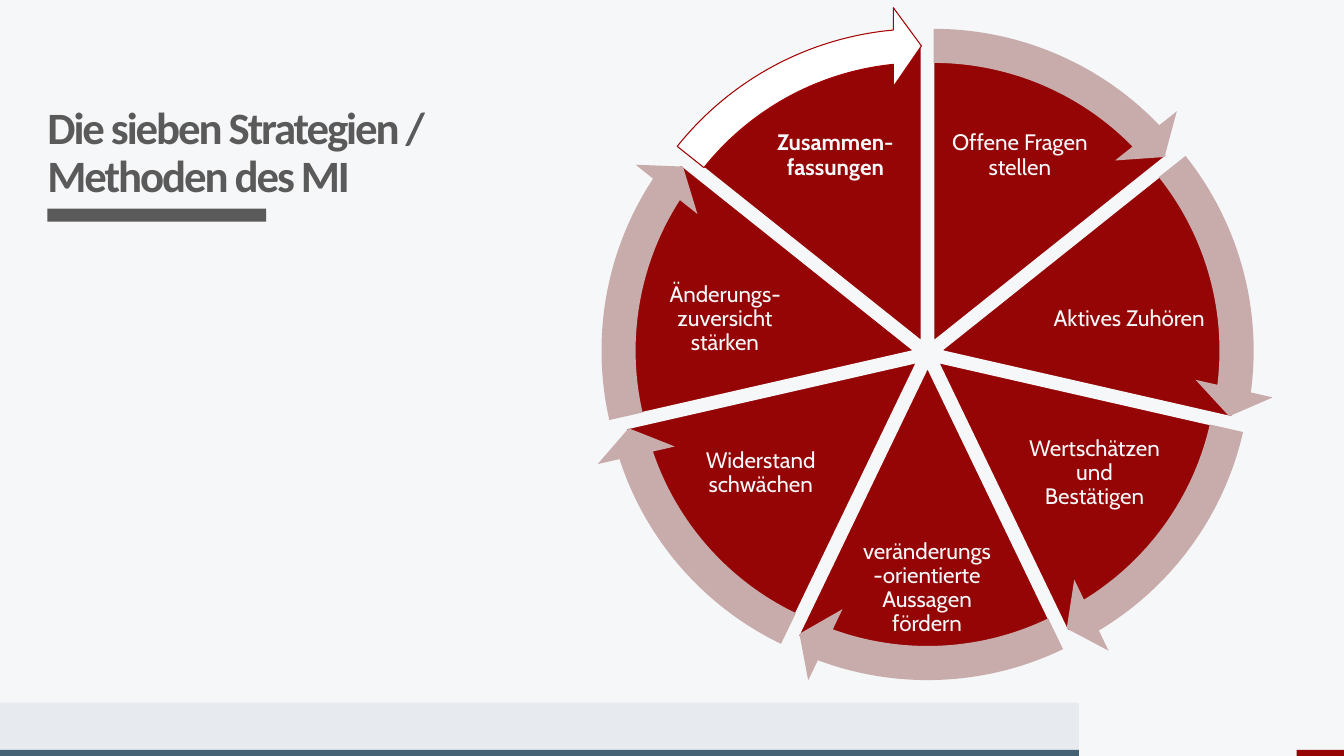
from math import cos, pi, sin

from pptx import Presentation
from pptx.dml.color import RGBColor
from pptx.enum.shapes import MSO_SHAPE
from pptx.enum.text import MSO_ANCHOR, PP_ALIGN
from pptx.util import Inches, Pt

PAPER = RGBColor(0xF6, 0xF7, 0xF9)
WHITE = RGBColor(0xFF, 0xFF, 0xFF)
GREY = RGBColor(0x5A, 0x5A, 0x5A)
MIST = RGBColor(0xE7, 0xEA, 0xEF)
SLATE = RGBColor(0x45, 0x61, 0x74)
RED = RGBColor(0x95, 0x05, 0x05)
OUTLINE = RGBColor(0xA4, 0x00, 0x00)
ROSE = RGBColor(0xC8, 0xAB, 0xAB)

HUB_X, HUB_Y, GAP = 9.2, 3.51, 0.14
PIE_SIZE, ARROW_SIZE = 5.91, 6.64
TURN, TOP = 216, 162  # full circle and twelve o'clock in adjustment units
HEAD = 3.275  # angle taken up by an arrowhead

BARS = [
    (0, 6.97, 10.7, 0.47, MIST),
    (0, 7.44, 10.7, 0.06, SLATE),
    (12.86, 7.44, 0.47, 0.06, RED),
    (0.47, 2.07, 2.17, 0.13, GREY),
]
STRATEGIES = [
    ("Offene Fragen stellen", (9.41, 0.98, 1.41, 1.13)),
    ("Aktives Zuhören", (10.39, 2.67, 1.62, 0.99)),
    ("Wertschätzen und Bestätigen", (10.15, 4.15, 1.41, 1.09)),
    ("veränderungs-orientierte Aussagen fördern", (8.51, 5.34, 1.37, 0.99)),
    ("Widerstand schwächen", (6.84, 4.15, 1.41, 1.09)),
    ("Änderungs-zuversicht stärken", (6.38, 2.67, 1.62, 0.99)),
    ("Zusammen-fassungen", (7.58, 0.98, 1.41, 1.13)),
]


class SlideBuilder:
    def __init__(self, slide):
        self.s = slide
        fill = slide.background.fill
        fill.solid()
        fill.fore_color.rgb = PAPER

    def shape(self, kind, box, color, line=None, width=1, adjustments=()):
        sp = self.s.shapes.add_shape(kind, *map(Inches, box))
        sp.shadow.inherit = False
        sp.fill.solid()
        sp.fill.fore_color.rgb = color
        if line is None:
            sp.line.fill.background()
        else:
            sp.line.color.rgb = line
            sp.line.width = Pt(width)
        for i, value in enumerate(adjustments):
            sp.adjustments[i] = value

    def text(self, text, box, color, font, margin=0, anchor=MSO_ANCHOR.MIDDLE,
             align=PP_ALIGN.CENTER, after=0, tracking=0):
        tf = self.s.shapes.add_textbox(*map(Inches, box)).text_frame
        frame = {"word_wrap": True, "vertical_anchor": anchor}
        frame |= {f"margin_{side}": Inches(margin)
                  for side in ("left", "top", "right", "bottom")}
        for name, value in frame.items():
            setattr(tf, name, value)
        p = tf.paragraphs[0]
        paragraph = {"alignment": align, "line_spacing": 0.9,
                     "space_after": Pt(after)}
        for name, value in paragraph.items():
            setattr(p, name, value)
        r = p.add_run()
        r.text = text
        for name, value in font.items():
            setattr(r.font, name, value)
        r.font.color.rgb = color
        if tracking:
            r.font._element.set("spc", str(tracking))


def sector(i):
    """Start and end of a sector in adjustment units."""
    step = TURN / len(STRATEGIES)
    return (TOP + i * step) % TURN, (TOP + (i + 1) * step) % TURN


def sector_box(i, size):
    """Square of the given size, moved out from the hub along the sector."""
    angle = (i + 0.5) * 2 * pi / len(STRATEGIES) - pi / 2
    return (HUB_X + GAP * cos(angle) - size / 2,
            HUB_Y + GAP * sin(angle) - size / 2, size, size)


def main():
    prs = Presentation()
    prs.slide_width, prs.slide_height = Inches(13.33), Inches(7.5)
    b = SlideBuilder(prs.slides.add_slide(prs.slide_layouts[6]))

    for *box, color in BARS:
        b.shape(MSO_SHAPE.RECTANGLE, box, color)
    b.text("Die sieben Strategien / Methoden des MI", (0.47, 0.47, 4.3, 1.54),
           GREY, {"name": "Calibri", "size": Pt(32), "bold": True},
           anchor=MSO_ANCHOR.BOTTOM, align=PP_ALIGN.LEFT, tracking=-150)

    last = len(STRATEGIES) - 1
    for i, (label, box) in enumerate(STRATEGIES):
        b.shape(MSO_SHAPE.PIE, sector_box(i, PIE_SIZE), RED, PAPER,
                adjustments=sector(i))
        b.text(label, box, PAPER,
               {"name": "Cabin", "size": Pt(16), "bold": i == last},
               margin=0.02, after=5.6)
    for i in range(len(STRATEGIES)):
        start, end = sector(i)
        color, line = (WHITE, OUTLINE) if i == last else (ROSE, None)
        b.shape(MSO_SHAPE.CIRCULAR_ARROW, sector_box(i, ARROW_SIZE), color,
                line, 0.75, (0.051, HEAD, end - HEAD, start, 0.059))

    prs.save("out.pptx")


if __name__ == "__main__":
    main()
